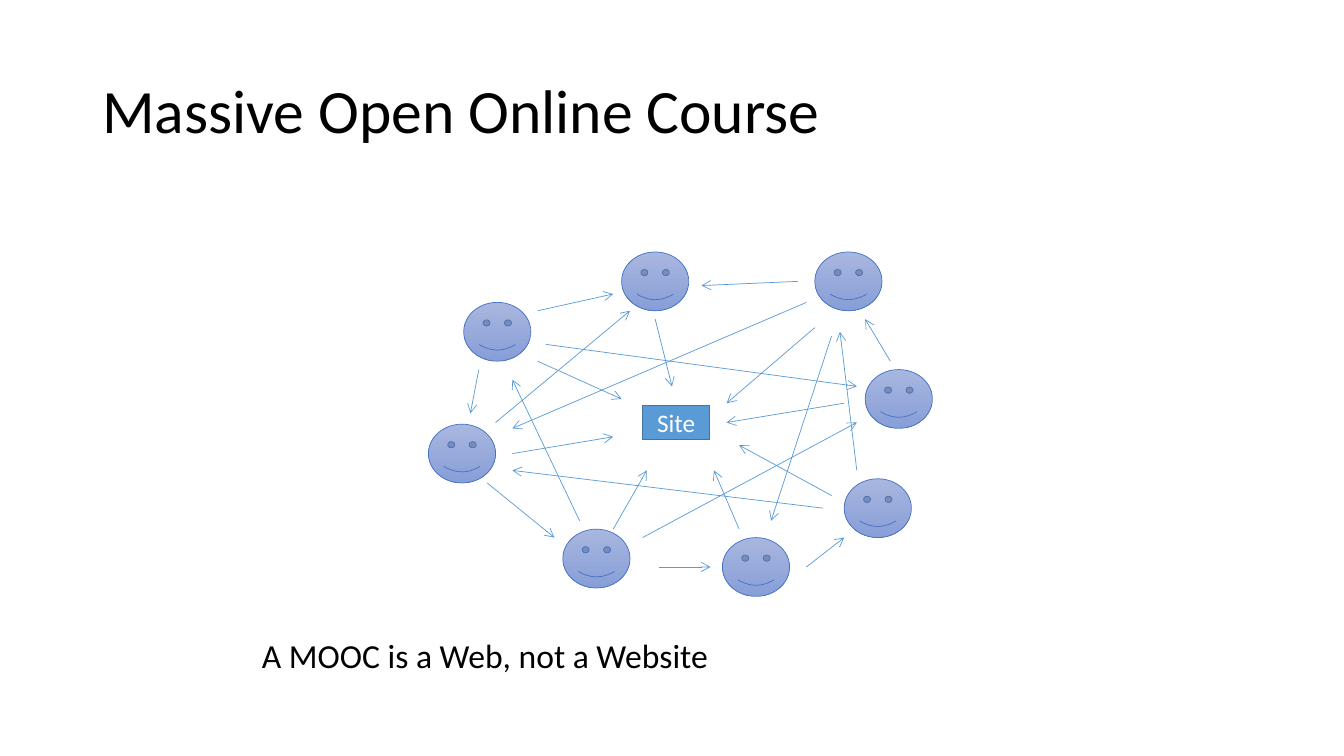
from dataclasses import dataclass

from lxml import etree
from pptx import Presentation
from pptx.dml.color import RGBColor as RGB
from pptx.enum.shapes import MSO_CONNECTOR as CONNECTOR, MSO_SHAPE as SHAPE
from pptx.enum.text import MSO_ANCHOR as ANCHOR, PP_ALIGN as ALIGN
from pptx.oxml.ns import qn
from pptx.util import Inches, Pt


@dataclass(frozen=True)
class Theme:
    font: str = "Calibri"
    text: str = "000000"
    site_text: str = "FFFFFF"
    site_fill: str = "5B9BD5"
    site_line: str = "43739E"
    face_top: str = "A8B7DF"
    face_bottom: str = "889ED7"
    face_line: str = "4472C4"
    arrow: str = "5B9BD5"
    title_size: float = 44
    caption_size: float = 24
    site_size: float = 18
    thin: float = 0.5
    thick: float = 1


# Grid of 160 columns by 90 rows, twelve cells to the inch
COLS, ROWS, CELLS_PER_INCH = 160, 90, 12
FACE_W, FACE_H = 8, 7

# Top left corner of each participant
FACES = [(103, 44), (100.5, 57), (97, 30), (86, 64),
         (67, 63), (51, 50.5), (55.2, 36), (74, 30)]

# Start column and row, end column and row
ARROWS_TO_SITE = [
    (97, 39, 86.5, 48), (100.5, 48, 86.5, 50.3), (99, 59, 88, 53),
    (88, 63, 85, 56), (78, 38, 80, 46), (64, 43, 74, 47.5),
    (61, 54, 73, 52), (73, 63, 77, 56),
]
ARROWS_BETWEEN_FACES = [
    (65, 41, 102, 46), (96, 36, 61, 51), (64, 37, 73, 35),
    (99, 40, 91.8, 62), (76.5, 64, 102, 50.3), (59, 50.3, 75, 37),
    (102, 56, 100, 39.5), (106, 43, 103, 38), (95, 33.5, 83.5, 34),
    (57, 44, 56, 49.2), (69, 62, 61, 45.2), (78.5, 67.5, 84.6, 67.5),
    (98, 60.5, 61, 56), (58, 57.5, 66, 64), (96, 67.5, 100.5, 64),
]


def grid(*cells):
    return [Inches(c / CELLS_PER_INCH) for c in cells]


class SlideBuilder:
    def __init__(self, prs, theme):
        self.theme = theme
        self.s = prs.slides.add_slide(prs.slide_layouts[6])

    def add_text(self, sp, text, size, color, anchor=ANCHOR.TOP, align=ALIGN.LEFT, spacing=1.0):
        tf = sp.text_frame
        tf.word_wrap = True
        tf.vertical_anchor = anchor
        p = tf.paragraphs[0]
        p.alignment = align
        p.line_spacing = spacing
        r = p.add_run()
        r.text = text
        r.font.name = self.theme.font
        r.font.size = Pt(size)
        r.font.color.rgb = RGB.from_string(color)

    def outline(self, sp, color, width):
        sp.line.color.rgb = RGB.from_string(color)
        sp.line.width = Pt(width)

    def label(self, box, text, size, **layout):
        sp = self.s.shapes.add_textbox(*grid(*box))
        self.add_text(sp, text, size, self.theme.text, **layout)

    def site(self, box, text):
        t = self.theme
        sp = self.s.shapes.add_shape(SHAPE.RECTANGLE, *grid(*box))
        sp.shadow.inherit = False
        sp.fill.solid()
        sp.fill.fore_color.rgb = RGB.from_string(t.site_fill)
        self.outline(sp, t.site_line, t.thick)
        self.add_text(sp, text, t.site_size, t.site_text, ANCHOR.MIDDLE, ALIGN.CENTER)

    def face(self, col, row):
        t = self.theme
        sp = self.s.shapes.add_shape(SHAPE.SMILEY_FACE, *grid(col, row, FACE_W, FACE_H))
        sp.shadow.inherit = False
        sp.fill.gradient()
        sp.fill.gradient_angle = 270
        for stop, color in zip(sp.fill.gradient_stops, (t.face_top, t.face_bottom)):
            stop.color.rgb = RGB.from_string(color)
        self.outline(sp, t.face_line, t.thin)

    def arrow(self, *ends):
        line = self.s.shapes.add_connector(CONNECTOR.STRAIGHT, *grid(*ends))
        self.outline(line, self.theme.arrow, self.theme.thin)
        etree.SubElement(line.get_or_add_ln(), qn("a:tailEnd"), type="arrow")
        etree.SubElement(line._element.spPr, qn("a:effectLst"))


def main():
    prs = Presentation()
    prs.slide_width, prs.slide_height = grid(COLS, ROWS)
    theme = Theme()
    slide = SlideBuilder(prs, theme)

    # Title
    slide.label((11, 4.8, 138, 17.4), "Massive Open Online Course", theme.title_size,
                anchor=ANCHOR.MIDDLE, spacing=0.9)

    # Site and the participants around it
    slide.site((76.5, 48.3, 8, 4), "Site")
    for corner in FACES:
        slide.face(*corner)

    # Links
    for ends in ARROWS_TO_SITE + ARROWS_BETWEEN_FACES:
        slide.arrow(*ends)

    # Caption
    slide.label((30, 75, 90, 6), "A MOOC is a Web, not a Website", theme.caption_size)

    prs.save("out.pptx")


if __name__ == "__main__":
    main()
